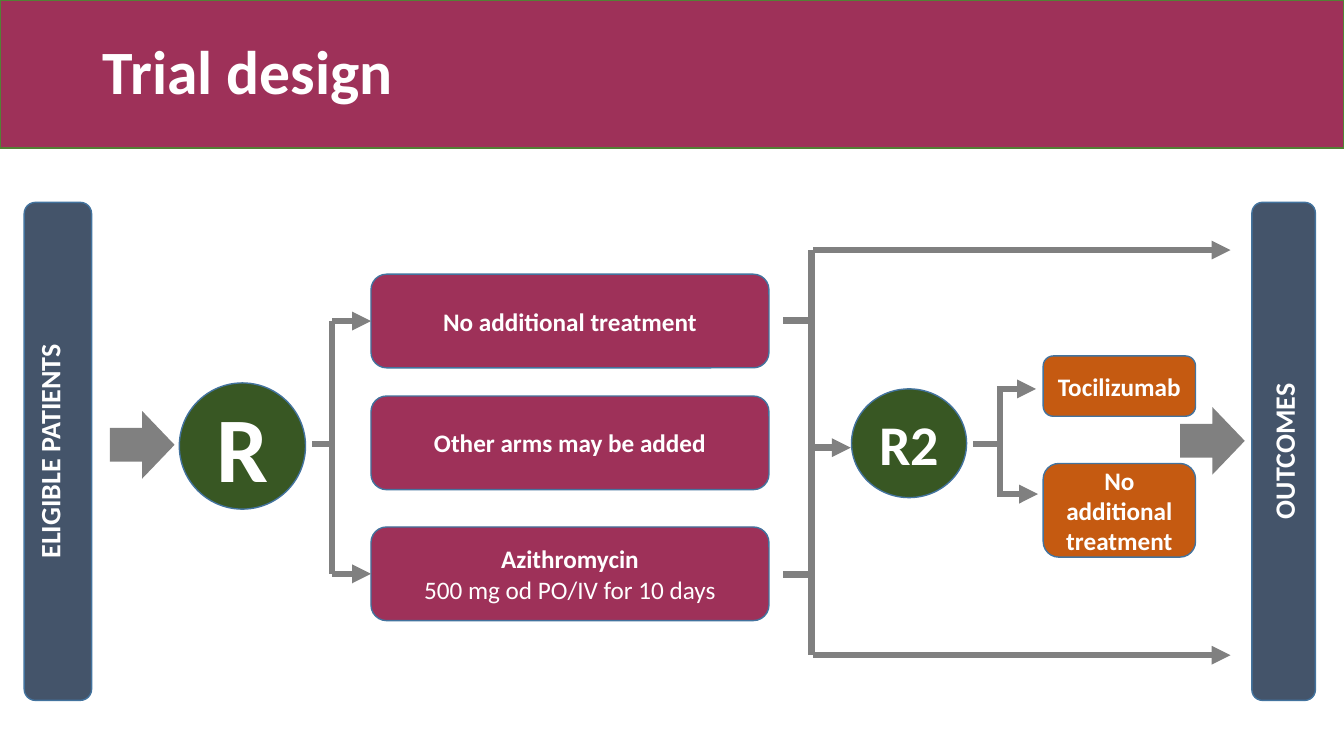
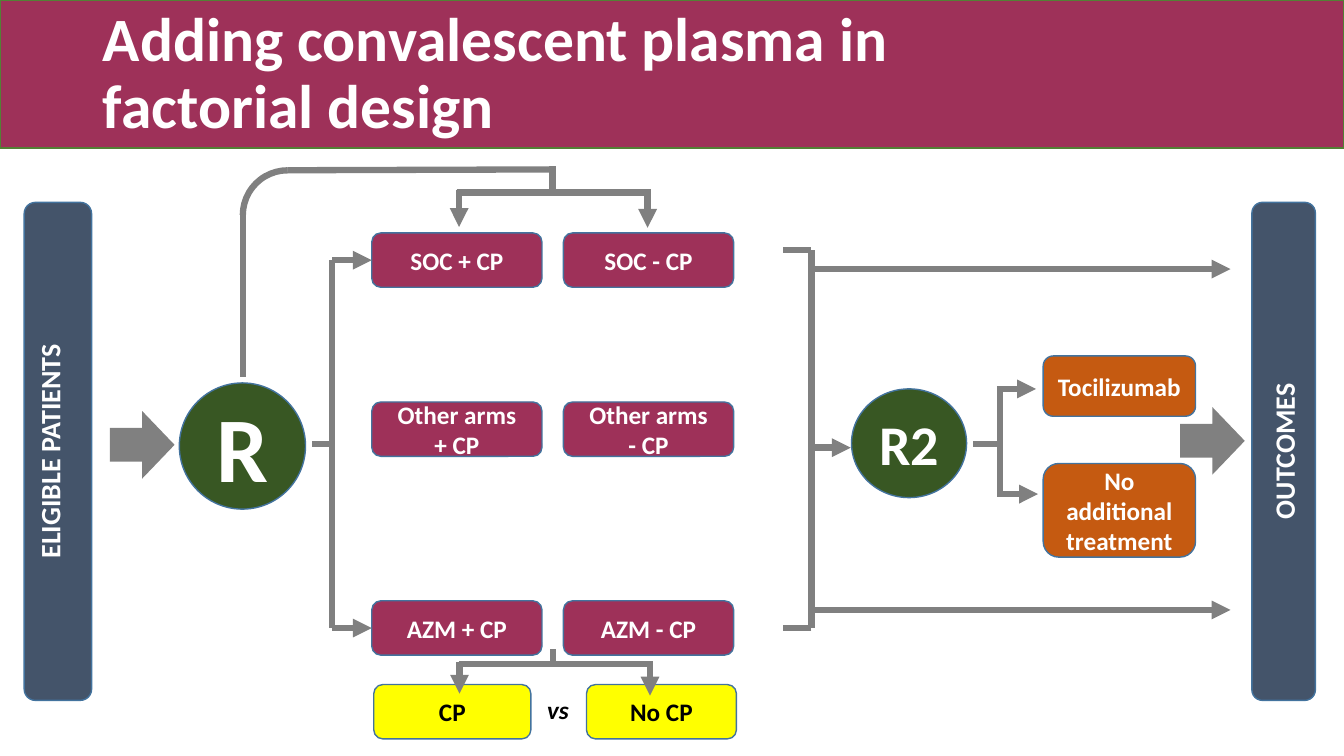
from dataclasses import dataclass

from lxml import etree
from pptx import Presentation
from pptx.dml.color import RGBColor
from pptx.enum.shapes import MSO_CONNECTOR, MSO_SHAPE
from pptx.enum.text import MSO_ANCHOR, MSO_AUTO_SIZE, PP_ALIGN
from pptx.oxml.ns import qn
from pptx.util import Cm, Pt

RECT, ROUND = MSO_SHAPE.RECTANGLE, MSO_SHAPE.ROUNDED_RECTANGLE
OVAL, ARROW, ARC = MSO_SHAPE.OVAL, MSO_SHAPE.RIGHT_ARROW, MSO_SHAPE.ARC
STRAIGHT = MSO_CONNECTOR.STRAIGHT
LEFT, CENTER = PP_ALIGN.LEFT, PP_ALIGN.CENTER
TOP, MIDDLE = MSO_ANCHOR.TOP, MSO_ANCHOR.MIDDLE
LEFT_SIDE = 1


@dataclass(frozen=True)
class Theme:
    font: str = "Calibri"
    plum: str = "9E3159"
    green: str = "385723"
    slate: str = "44546A"
    orange: str = "C55A11"
    yellow: str = "FFFF00"
    gray: str = "808080"
    edge: str = "43739E"
    rim: str = "538035"
    white: str = "FFFFFF"
    black: str = "000000"
    title: int = 44
    big: int = 66
    mid: int = 40
    side: int = 20
    body: int = 18
    thin: int = 1
    thick: float = 4.5


T = Theme()

# All places are in centimetres: left, top, width, height
WIDE, HIGH = 33.87, 19.05
BAND = (0, 0, WIDE, 3.73)
SIDES = [("ELIGIBLE PATIENTS", (0.61, 5.1, 1.7, 12.55), TOP),
         ("OUTCOMES", (31.55, 5.1, 1.6, 12.55), MIDDLE)]
ARROWS = [(2.77, 10.36, 1.63, 1.7), (29.74, 10.26, 1.63, 1.7)]
NODES = [("R", (4.52, 9.65, 3.18, 3.18), T.big),
         ("R2", (21.46, 9.8, 2.9, 2.74), T.mid)]
DRUGS = [("Tocilizumab", (26.29, 8.97, 3.84, 1.52)),
         ("No additional treatment", (26.29, 11.68, 3.84, 2.36))]

# Lines: x1, y1, x2, y2
R2_LINES = [(25.2, 9.8, 25.2, 12.52), (25.2, 11.18, 24.51, 11.18)]
R2_TIPS = [(25.12, 9.8, 26.11, 9.8), (25.17, 12.45, 26.16, 12.45),
           (20.45, 11.28, 21.44, 11.28)]
FORK_X, FORK_Y, MERGE_X = 8.37, 11.18, 20.45

DESIGN = {
    "title": "Trial design", "width": 29.2,
    "cols": [9.35], "rows": [6.91, 9.98, 13.28], "size": (10.03, 2.36),
    "arms": [["No additional treatment"], ["Other arms may be added"],
             ["Azithromycin\n500 mg od PO/IV for 10 days"]],
    "merge": (6.3, 16.51), "stubs": (8.08, 14.48), "outs": (6.3, 16.51),
}
PLASMA = {
    "title": "Adding convalescent plasma in factorial design", "width": 22.48,
    "cols": [9.37, 14.2], "rows": [5.87, 10.13, 15.14], "size": (4.29, 1.37),
    "arms": [["SOC + CP", "SOC - CP"],
             ["Other arms\n+ CP", "Other arms\n- CP"],
             ["AZM + CP", "AZM - CP"]],
    "merge": (6.3, 15.82), "stubs": (6.3, 15.82), "outs": (6.78, 15.37),
}
CP_BOXES = [("CP", (9.42, 17.25, 3.96, 1.37)),
            ("No CP", (14.78, 17.25, 3.78, 1.37))]
CP_VERSUS = (13.54, 17.37, 1.32, 1.02)
CP_ARC = (6.12, 4.29, 2.26, 2.26)
CP_LINES = [(6.12, 5.41, 6.12, 9.5), (13.94, 4.27, 7.24, 4.29),
            (13.92, 4.19, 13.92, 4.93), (11.51, 4.85, 16.41, 4.85),
            (13.94, 16.36, 13.94, 16.69), (11.56, 16.74, 16.46, 16.74)]
CP_TIPS = [(11.57, 4.8, 11.57, 5.72), (16.32, 4.85, 16.32, 5.74),
           (11.58, 16.69, 11.58, 17.48), (16.38, 16.74, 16.38, 17.53)]


def rgb(code):
    return RGBColor.from_string(code)


def cms(place):
    return [Cm(v) for v in place]


def write(frame, text, size=T.body, color=T.white, bold=True, italic=False,
          align=CENTER, anchor=MIDDLE, space=None, lean=False):
    """Fill a frame, one paragraph a line; lean makes later lines regular."""
    frame.word_wrap = True
    frame.vertical_anchor = anchor
    for i, words in enumerate(text.split("\n")):
        para = frame.add_paragraph() if i else frame.paragraphs[0]
        para.alignment = align
        if space:
            para.line_spacing = space
        run = para.add_run()
        run.text = words
        font = run.font
        font.name, font.size = T.font, Pt(size)
        font.bold, font.italic = bold and not (lean and i), italic
        font.color.rgb = rgb(color)


def shape(slide, kind, place, fill=None, line=None, width=T.thin):
    item = slide.shapes.add_shape(kind, *cms(place))
    item.shadow.inherit = False
    if fill:
        item.fill.solid()
        item.fill.fore_color.rgb = rgb(fill)
    else:
        item.fill.background()
    if line:
        item.line.color.rgb = rgb(line)
        item.line.width = Pt(width)
    else:
        item.line.fill.background()
    return item


def label(slide, kind, place, fill, text, **style):
    item = shape(slide, kind, place, fill, T.edge)
    write(item.text_frame, text, **style)
    return item


def wire(slide, ends, tip=False):
    item = slide.shapes.add_connector(STRAIGHT, *cms(ends))
    item.line.color.rgb = rgb(T.gray)
    item.line.width = Pt(T.thick)
    if tip:
        etree.SubElement(item.line._get_or_add_ln(), qn("a:tailEnd"),
                         type="triangle")
    etree.SubElement(item._element.spPr, qn("a:effectLst"))
    return item


def wires(slide, lines, tips):
    for ends in lines:
        wire(slide, ends)
    for ends in tips:
        wire(slide, ends, tip=True)


def share_band(slide):
    """Move the title band into the layout, behind its title."""
    band = shape(slide, RECT, BAND, T.plum, T.rim)._element
    band.nvSpPr.cNvPr.set("id", "20")
    slide.slide_layout.shapes._spTree.insert(2, band)


def add_title(slide, text, width):
    title = slide.shapes.title
    title.left, title.top, title.width, title.height = cms(
        (2.34, 0.05, width, 3.68))
    title.text_frame.auto_size = MSO_AUTO_SIZE.NONE
    write(title.text_frame, text, size=T.title, align=LEFT, space=0.9)


def add_frame(slide):
    """Draw the parts of the flow that every design has."""
    for text, place, anchor in SIDES:
        bar = label(slide, ROUND, place, T.slate, text, size=T.side,
                    anchor=anchor)
        bar.text_frame._txBody.bodyPr.set("vert", "vert270")
    for place in ARROWS:
        shape(slide, ARROW, place, T.gray)
    for text, place, size in NODES:
        label(slide, OVAL, place, T.green, text, size=size)
    for text, place in DRUGS:
        label(slide, ROUND, place, T.orange, text)
    wires(slide, R2_LINES, R2_TIPS)


def add_arms(slide, plan):
    wide, high = plan["size"]
    firsts = []
    for top, texts in zip(plan["rows"], plan["arms"]):
        boxes = [label(slide, ROUND, (left, top, wide, high), T.plum, text,
                       lean=len(texts) == 1)
                 for left, text in zip(plan["cols"], texts)]
        firsts.append((boxes[0], top + high / 2))
    ends = firsts[0], firsts[-1]
    wire(slide, (FORK_X, ends[0][1], FORK_X, ends[1][1]))
    wire(slide, (FORK_X, FORK_Y, 7.87, FORK_Y))
    for box, y in ends:
        tip = wire(slide, (FORK_X, y, plan["cols"][0], y), tip=True)
        tip.end_connect(box, LEFT_SIDE)


def add_merge(slide, plan):
    start, stop = plan["merge"]
    stubs = [(MERGE_X, y, 19.74, y) for y in plan["stubs"]]
    outs = [(MERGE_X + 0.05, y, 31.01, y) for y in plan["outs"]]
    wires(slide, [(MERGE_X, start, MERGE_X, stop)] + stubs, outs)


def add_plasma(slide):
    for text, place in CP_BOXES:
        label(slide, ROUND, place, T.yellow, text, color=T.black)
    versus = slide.shapes.add_textbox(*cms(CP_VERSUS))
    write(versus.text_frame, "vs", color=T.black, italic=True, align=LEFT,
          anchor=TOP)
    bend = shape(slide, ARC, CP_ARC, line=T.gray, width=T.thick)
    bend.rotation = 270
    wires(slide, CP_LINES, CP_TIPS)


def main():
    deck = Presentation()
    deck.slide_width, deck.slide_height = Cm(WIDE), Cm(HIGH)
    layout = deck.slide_layouts.get_by_name("Title Only")
    slides = []
    for plan in (DESIGN, PLASMA):
        slide = deck.slides.add_slide(layout)
        if not slides:
            share_band(slide)
        add_title(slide, plan["title"], plan["width"])
        add_frame(slide)
        add_arms(slide, plan)
        add_merge(slide, plan)
        slides.append(slide)
    add_plasma(slides[-1])
    deck.save("out.pptx")


if __name__ == "__main__":
    main()
